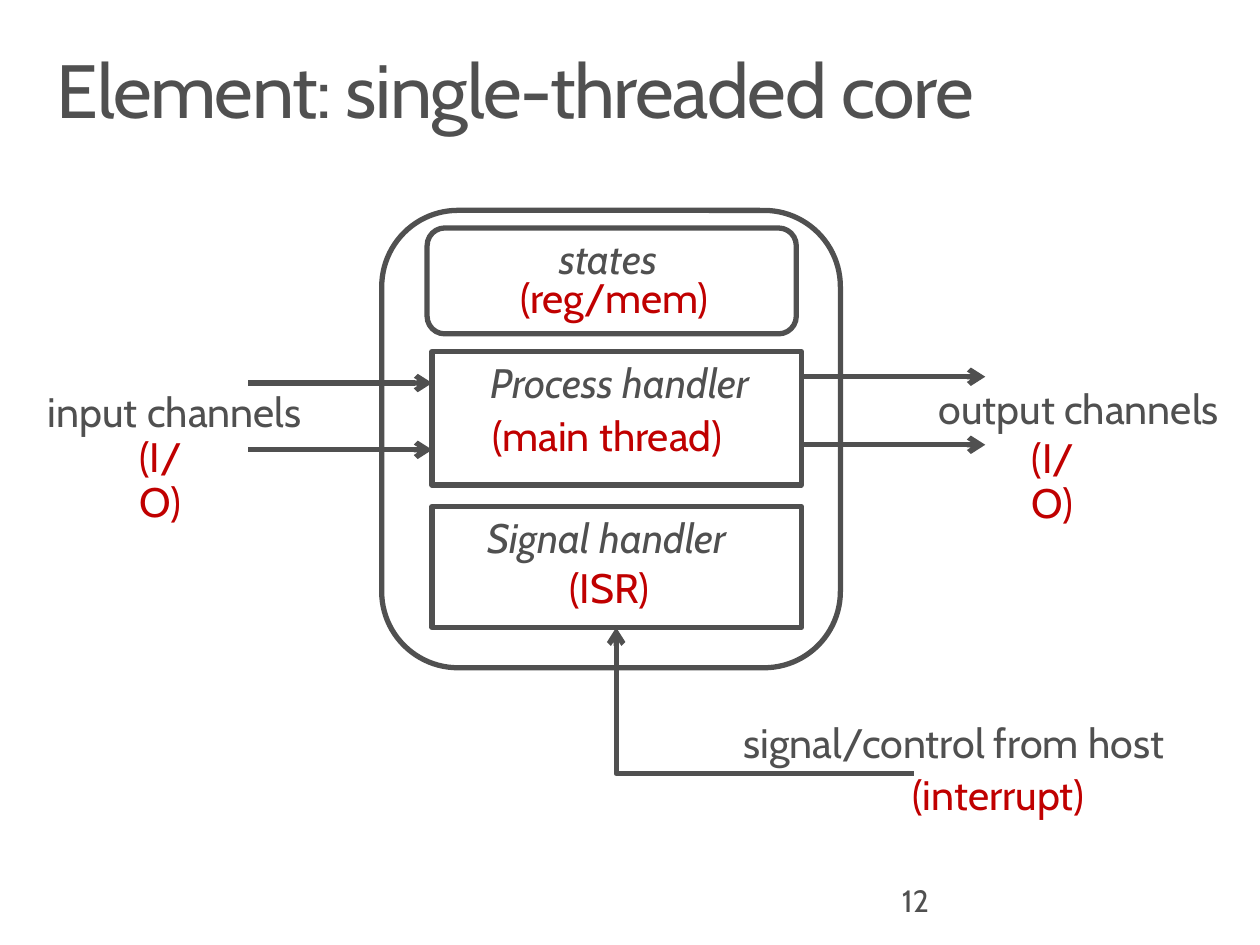
from typing import NamedTuple

from lxml.etree import SubElement
from pptx import Presentation
from pptx.dml.color import RGBColor
from pptx.enum.shapes import MSO_CONNECTOR, MSO_SHAPE
from pptx.enum.text import MSO_ANCHOR, MSO_AUTO_SIZE, PP_ALIGN
from pptx.oxml.ns import qn
from pptx.util import Inches, Pt

GRAY, RED, WHITE = "505050", "C00000", "FFFFFF"
FONT = "Cabin"


class Box(NamedTuple):
    kind: MSO_SHAPE
    left: float
    top: float
    width: float
    height: float


class Label(NamedTuple):
    text: str
    left: float
    top: float
    width: float
    color: str = GRAY
    italic: bool = False


class Arrow(NamedTuple):
    left: float
    right: float
    y: float


BOXES = [
    Box(MSO_SHAPE.ROUNDED_RECTANGLE, 3.03, 1.67, 3.64, 3.63),  # core
    Box(MSO_SHAPE.ROUNDED_RECTANGLE, 3.39, 1.81, 2.93, 0.84),  # states
    Box(MSO_SHAPE.RECTANGLE, 3.43, 2.79, 2.93, 1.06),  # process
    Box(MSO_SHAPE.RECTANGLE, 3.43, 4.02, 2.93, 0.96),  # signal
]
ARROWS = [
    Arrow(1.97, 3.43, 3.04),
    Arrow(1.97, 3.43, 3.57),
    Arrow(6.35, 7.82, 2.99),
    Arrow(6.35, 7.82, 3.53),
]
LABELS = [
    Label("input channels", 0.18, 2.95, 2.52),
    Label("(I/O)", 0.91, 3.31, 1.06, RED),
    Label("output channels", 7.25, 2.93, 2.75),
    Label("(I/O)", 7.99, 3.32, 1.06, RED),
    Label("states", 4.24, 1.74, 1.29, italic=True),
    Label("(reg/mem)", 3.93, 2.05, 1.94, RED),
    Label("Process handler", 3.69, 2.72, 2.62, italic=True),
    Label("(main thread)", 3.71, 3.14, 2.35, RED),
    Label("Signal handler", 3.67, 3.95, 2.73, italic=True),
    Label("(ISR)", 4.32, 4.35, 1.06, RED),
    Label("signal/control from host", 5.7, 5.58, 3.91),
    Label("(interrupt)", 7.04, 5.99, 1.87, RED),
]


def paint(target, color: str) -> None:
    """Give a fill, line or font a solid color."""
    if hasattr(target, "solid"):
        target.solid()
        target.fore_color.rgb = RGBColor.from_string(color)
    else:
        target.color.rgb = RGBColor.from_string(color)


def apply(target, values: dict) -> None:
    for name, value in values.items():
        setattr(target, name, value)


def write(shape, text: str, size: float, color: str, frame: dict,
          para: dict, italic: bool = False):
    """Fill a shape with one formatted line and return its run."""
    apply(shape.text_frame, frame)
    line = shape.text_frame.paragraphs[0]
    apply(line, para)
    run = line.add_run()
    run.text = text
    apply(run.font, {"name": FONT, "size": Pt(size), "italic": italic})
    paint(run.font, color)
    return run


def margins(side: float, edge: float) -> dict:
    return {"margin_left": Inches(side), "margin_right": Inches(side),
            "margin_top": Inches(edge), "margin_bottom": Inches(edge)}


def draw_box(slide, box: Box) -> None:
    shape = slide.shapes.add_shape(box.kind, *map(Inches, box[1:]))
    shape.shadow.inherit = False
    paint(shape.fill, WHITE)
    paint(shape.line, GRAY)
    shape.line.width = Pt(3)


def draw_line(slide, kind: MSO_CONNECTOR, *ends: float):
    """Draw a connector with an arrowhead at its end."""
    link = slide.shapes.add_connector(kind, *map(Inches, ends))
    paint(link.line, GRAY)
    link.line.width = Pt(3)
    SubElement(link.line._get_or_add_ln(), qn("a:tailEnd"), type="arrow")
    SubElement(link._element.spPr, qn("a:effectLst"))
    return link


def draw_label(slide, label: Label) -> None:
    area = (label.left, label.top, label.width, 0.67)
    shape = slide.shapes.add_textbox(*map(Inches, area))
    frame = margins(0.2, 0.16) | {
        "word_wrap": False, "auto_size": MSO_AUTO_SIZE.SHAPE_TO_FIT_TEXT}
    para = {"line_spacing": 0.9, "space_after": Pt(5.9)}
    write(shape, label.text, 23.5, label.color, frame, para, label.italic)


def main() -> None:
    deck = Presentation()
    apply(deck, {"slide_width": Inches(10), "slide_height": Inches(7.5)})
    slide = deck.slides.add_slide(deck.slide_layouts[5])

    # Title
    title = slide.shapes.title
    apply(title, {"left": Inches(0.29), "top": Inches(0.32),
                  "width": Inches(9.41), "height": Inches(0.98)})
    frame = margins(0.16, 0.1) | {
        "word_wrap": True, "auto_size": MSO_AUTO_SIZE.NONE,
        "vertical_anchor": MSO_ANCHOR.TOP}
    run = write(title, "Element: single-threaded core", 43.1, GRAY, frame,
                {"line_spacing": 0.9, "alignment": PP_ALIGN.LEFT})
    run.font._element.set("spc", "-80")

    # Core and its parts
    for box in BOXES:
        draw_box(slide, box)

    # Channels
    for arrow in ARROWS:
        draw_line(slide, MSO_CONNECTOR.STRAIGHT,
                  arrow.left, arrow.y, arrow.right, arrow.y)

    # Signal from the host: one bend, turned to end at the top left
    bend = draw_line(slide, MSO_CONNECTOR.ELBOW, 4.89, 4.98, 7.25, 6.14)
    form = bend._element.spPr
    form.find(qn("a:prstGeom")).set("prst", "bentConnector2")
    form.find(qn("a:xfrm")).set("rot", str(180 * 60000))

    # Labels
    for label in LABELS:
        draw_label(slide, label)

    # Page number
    area = (7.06, 6.95, 2.25, 0.4)
    page = slide.shapes.add_textbox(*map(Inches, area))
    write(page, "12", 17.6, GRAY, {"word_wrap": True}, {})

    deck.save("out.pptx")


if __name__ == "__main__":
    main()
